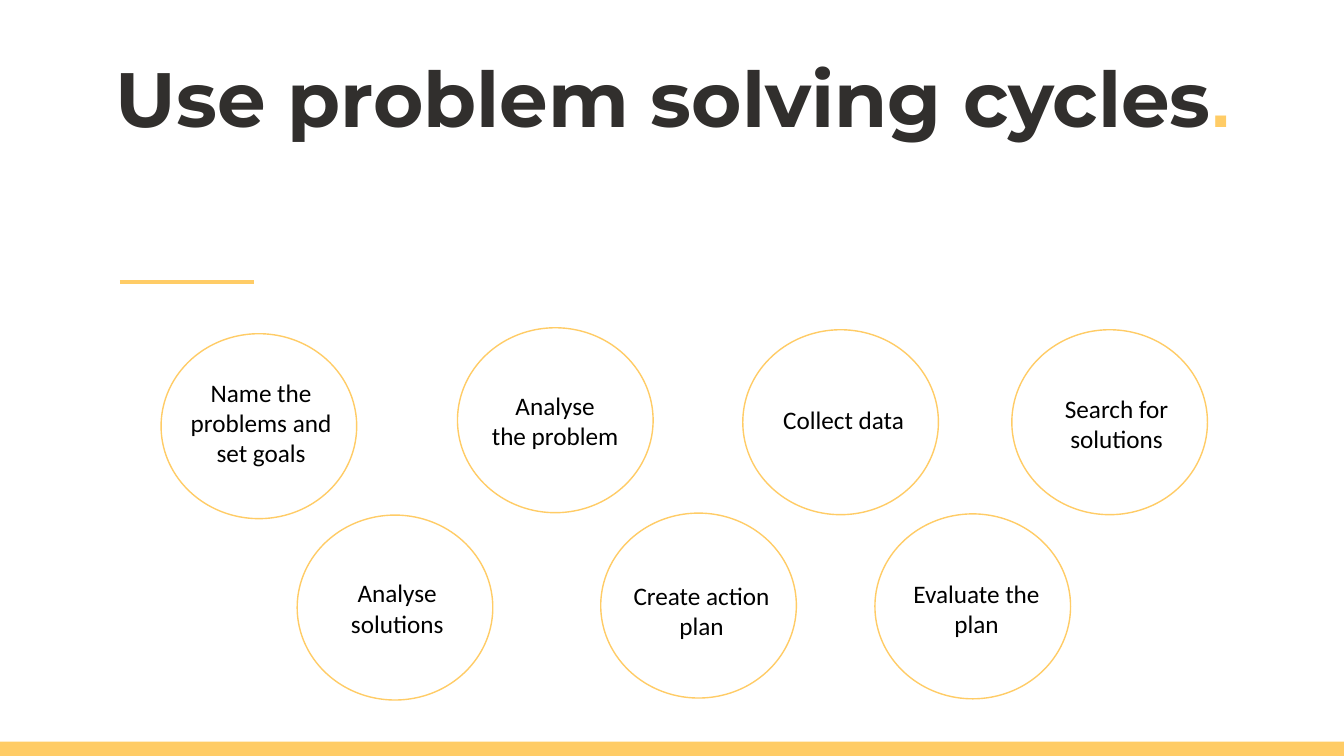
from pptx import Presentation
from pptx.dml.color import RGBColor as RGB
from pptx.enum.shapes import MSO_CONNECTOR as Link, MSO_SHAPE as Kind
from pptx.enum.text import PP_ALIGN as Align
from pptx.oxml.ns import qn
from pptx.util import Cm, Pt
from lxml.etree import SubElement

# Content
COLORS = {"gold": "FFCC66", "dark": "312F2D", "text": "000000"}
TITLE = [("Use problem solving cycles", "Montserrat", "dark"),
         (".", "Arial", "gold")]
# Paragraphs, drawn lines, circle left and top, label left and top (cm)
STEPS = [
    (["Name the problems and set goals"], 3, (4.06, 8.41), (4.32, 9.37)),
    (["Analyse", "the problem"], 2, (11.53, 8.26), (11.73, 9.7)),
    (["Collect data"], 1, (18.72, 8.31), (19, 10.06)),
    (["Search for solutions"], 2, (25.5, 8.31), (25.88, 9.78)),
    (["Analyse solutions"], 2, (7.49, 12.98), (7.75, 14.43)),
    (["Create action plan"], 2, (15.14, 12.93), (15.42, 14.5)),
    (["Evaluate the plan"], 2, (22.05, 12.95), (22.35, 14.45)),
]
WIDE, HIGH = 33.87, 19.05
BAR = 0.36
CIRCLE = (4.93, 4.66)
LABEL = 4.52
PAD, LINE = 0.25, 0.775


def color(name):
    return RGB.from_string(COLORS[name])


def add_box(slide, x, y, w, h):
    frame = slide.shapes.add_textbox(Cm(x), Cm(y), Cm(w), Cm(h)).text_frame
    frame.word_wrap = True
    return frame


def add_step(slide, paras, lines, spot, place):
    ring = slide.shapes.add_shape(Kind.OVAL, *map(Cm, spot + CIRCLE))
    ring.shadow.inherit = False
    ring.fill.background()
    ring.line.color.rgb = color("gold")
    ring.line.width = Pt(1)
    frame = add_box(slide, *place, LABEL, PAD + LINE * lines)
    frame.text = "\n".join(paras)
    for para in frame.paragraphs:
        para.alignment = Align.CENTER
        para.font.name = "Calibri"
        para.font.size = Pt(18)
        para.font.color.rgb = color("text")


deck = Presentation()
deck.slide_width, deck.slide_height = Cm(WIDE), Cm(HIGH)
slide = deck.slides.add_slide(deck.slide_layouts[6])

# Bottom bar
bar = slide.shapes.add_shape(Kind.RECTANGLE, 0, Cm(HIGH - BAR), Cm(WIDE), Cm(BAR))
bar.shadow.inherit = False
bar.fill.solid()
bar.fill.fore_color.rgb = color("gold")
bar.line.fill.background()

# Title
head = add_box(slide, 2.67, 1.14, 29.85, 4.95).paragraphs[0]
head.font.size = Pt(55)
head.font.bold = True
for text, face, tint in TITLE:
    run = head.add_run()
    run.text = text
    run.font.name = face
    run.font.color.rgb = color(tint)

# Accent line
rule = slide.shapes.add_connector(Link.STRAIGHT, Cm(3.02), Cm(7.11), Cm(6.4), Cm(7.11))
rule.line.color.rgb = color("gold")
rule.line.width = Pt(3.25)
SubElement(rule.element.spPr, qn("a:effectLst"))

# Cycle steps
for step in STEPS:
    add_step(slide, *step)

deck.save("out.pptx")
